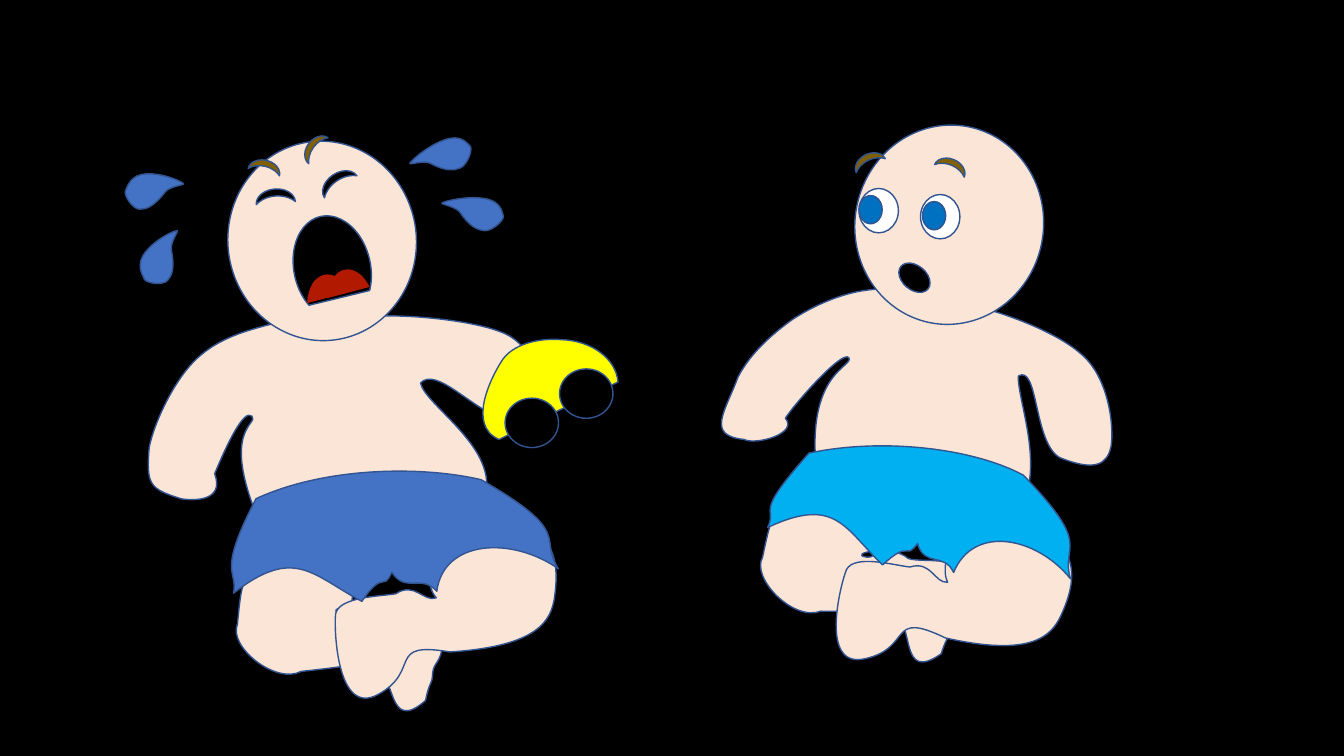
from math import cos, radians, sin

from lxml import etree
from pptx import Presentation
from pptx import util as u
from pptx.dml.color import RGBColor
from pptx.enum.shapes import MSO_SHAPE as kinds
from pptx.oxml.ns import qn

SKIN, BLUE, SKY, BROWN = "FBE5D6", "4472C4", "00B0F0", "806000"
BLACK, WHITE, IRIS, RED = "000000", "FFFFFF", "0070C0", "B11A01"
YELLOW, EDGE = "FFFF00", "325491"
UNIT = 1000  # freeform units per inch


def hue(fmt, color):
    """Give a fill or a line one solid colour."""
    fmt.solid()
    fmt.fore_color.rgb = RGBColor.from_string(color)


def draw(host, kind, box, fill, turn=0, edge=EDGE, adjust=(), stretch=(1, 1)):
    """Add a preset, or a closed outline if kind is a dict of named curves.

    A curve holds handle, handle, end, in inches from the centre of the unturned
    box. It starts where the one before it ends; the first starts at the last end.
    """
    left, top, wide, high = box
    if isinstance(kind, dict):
        x, y, right, low = [round(v * UNIT) for v in (left, top, left + wide, top + high)]
        frame = host.shapes.build_freeform(x, y, scale=914400 / UNIT)
        frame.add_line_segments([(right, y), (right, low), (x, low)])
        shape = frame.convert_to_shape()
        trace = shape._element.find(".//" + qn("a:path"))
        for step in list(trace):
            trace.remove(step)
        curves = list(kind.values())
        steps = [("a:moveTo", curves[-1][4:])] + [("a:cubicBezTo", c) for c in curves]
        for tag, nums in steps:
            step = etree.SubElement(trace, qn(tag))
            for dx, dy in zip(nums[::2], nums[1::2]):
                spot = etree.SubElement(step, qn("a:pt"))
                spot.set("x", str(round((wide / 2 + dx * stretch[0]) * UNIT)))
                spot.set("y", str(round((high / 2 + dy * stretch[1]) * UNIT)))
        etree.SubElement(trace, qn("a:close"))
    else:
        shape = host.shapes.add_shape(kind, *[u.Inches(v) for v in box])
        for i, value in enumerate(adjust):
            shape.adjustments[i] = value
    shape.shadow.inherit = False
    shape.rotation = turn
    hue(shape.fill, fill)
    if edge:
        hue(shape.line.fill, edge)
        shape.line.width = u.Pt(1)
    else:
        shape.line.fill.background()


# Outlines both babies share, from the centre of their boxes
BACK_LEG = {
    "shin": (-0.05, 0.29, -0.08, 0.31, -0.54, 0.07),
    "knee": (-0.83, 0.04, -1.01, -0.54, -0.81, -0.67),
    "thigh": (-0.36, -1.23, -0.59, -0.90, 0.18, -0.86),
    "seat": (0.63, -0.73, 0.28, -0.07, 0.11, -0.20),
    "fold": (-0.06, -0.32, 0.39, -0.21, 0.47, 0.00),
    "heel": (0.59, 0.12, 1.02, 0.21, 0.85, 0.51),
    "sole": (0.68, 0.79, 0.62, 0.70, 0.54, 0.80),
    "ball": (0.46, 0.91, 0.49, 0.83, 0.33, 0.99),
    "toes": (-0.18, 1.06, 0.24, 0.60, 0.09, 0.44),
}
FRONT_LEG = {
    "sole": (0.16, 0.60, -0.30, 0.57, 0.28, 0.29),
    "shin": (0.97, -0.27, 0.91, -0.55, 0.82, -0.74),
    "knee": (0.72, -0.93, 0.42, -1.54, -0.31, -0.88),
    "thigh": (-0.75, -0.74, -0.36, -0.11, -0.14, -0.07),
    "ankle": (-0.21, 0.04, -0.41, -0.08, -0.49, 0.13),
    "instep": (-0.61, 0.25, -0.93, 0.48, -0.86, 0.64),
    "toes": (-0.78, 0.78, -0.25, 1.47, -0.05, 1.04),
}
SHORTS = {
    "left hip": (-1.54, 0.50, -1.75, 0.59, -1.47, -0.22),
    "waist": (-0.85, -0.63, 0.09, -0.79, 0.71, -0.74),
    "right hip": (1.71, -0.35, 1.35, -0.26, 1.60, 0.02),
    "right hem": (1.10, -0.23, 0.43, -0.10, 0.44, 0.42),
    "right fold": (0.26, 0.27, 0.14, 0.49, -0.03, 0.30),
    "left fold": (-0.09, 0.52, -0.11, 0.27, -0.28, 0.63),
    "left hem": (-0.80, 0.45, -1.02, 0.18, -1.55, 0.74),
}
# The other baby's shorts sit lower at the left end of the waist
LOW_SHORTS = SHORTS | {
    "left hip": (-1.54, 0.50, -1.75, 0.71, -1.46, -0.10),
    "waist": (-0.83, -0.52, 0.09, -0.79, 0.71, -0.74),
}
TEAR = {
    "left side": (-0.155, 0.03, -0.12, -0.04, 0.03, -0.12),
    "neck": (0.10, -0.15, 0.14, -0.32, 0.15, -0.29),
    "right side": (0.17, -0.24, 0.19, -0.03, 0.15, 0.12),
    "right round": (0.11, 0.29, 0.0, 0.29, -0.05, 0.30),
    "left round": (-0.10, 0.29, -0.18, 0.17, -0.17, 0.10),
}

# Outlines used once, as they lie on the slide
CRY_BODY = {
    "left armpit": (2.42, 4.05, 2.25, 4.41, 2.13, 4.7),
    "left palm": (2.23, 4.97, 1.93, 4.97, 1.8, 4.95),
    "left hand": (1.48, 4.85, 1.45, 4.81, 1.48, 4.44),
    "left forearm": (1.53, 4.19, 1.72, 3.8, 1.91, 3.6),
    "left arm": (2.1, 3.4, 2.34, 3.31, 2.6, 3.24),
    "neck": (2.86, 3.16, 3.03, 3.23, 3.46, 3.16),
    "right arm": (3.88, 3.09, 4.65, 3.17, 4.96, 3.29),
    "right wrist": (5.27, 3.4, 5.32, 3.71, 5.33, 3.86),
    "right hand": (5.33, 4, 5.37, 4.18, 4.99, 4.15),
    "right armpit": (4.7, 4.08, 4.33, 3.63, 4.17, 3.8),
    "right flank": (4.22, 4.02, 4.91, 4.42, 4.82, 4.89),
    "belly": (4.71, 4.92, 2.81, 4.46, 2.57, 5.17),
    "left flank": (2.18, 4.25, 2.57, 4.21, 2.5, 4.13),
}
STARE_BODY = {
    "left armpit": (8.36, 3.46, 7.87, 4.02, 7.79, 4.15),
    "left palm": (7.92, 4.3, 7.5, 4.42, 7.38, 4.36),
    "left hand": (7, 4.32, 7.19, 4.09, 7.32, 3.74),
    "left forearm": (7.44, 3.51, 7.65, 3.32, 7.86, 3.17),
    "left arm": (8.07, 3.03, 8.35, 2.91, 8.59, 2.88),
    "neck": (8.83, 2.84, 8.89, 2.92, 9.31, 2.97),
    "right arm": (9.74, 3.01, 10.44, 3.26, 10.72, 3.51),
    "right wrist": (11.01, 3.75, 11.05, 4.26, 11.02, 4.43),
    "right hand": (10.98, 4.61, 10.86, 4.68, 10.51, 4.54),
    "right armpit": (10.25, 4.39, 10.3, 3.61, 10.1, 3.73),
    "right flank": (10.09, 3.96, 10.35, 4.58, 10.14, 5.01),
    "belly": (10.03, 5, 8.53, 4.06, 8.1, 4.68),
    "left flank": (7.99, 3.69, 8.47, 3.64, 8.42, 3.55),
}
HOOD = {
    "rear": (4.63, 4.22, 4.87, 3.75, 4.97, 3.59),
    "roof": (5.07, 3.42, 5.33, 3.35, 5.57, 3.37),
    "nose": (5.87, 3.38, 6.11, 3.56, 6.13, 3.79),
    "floor": (5.8, 3.95, 5.27, 4.2, 4.95, 4.36),
}
CRY_BOX, STARE_BOX = (1.42, 3.15, 3.92, 1.94), (7.24, 2.95, 3.85, 1.91)
HOOD_BOX = (4.98, 3.16, 0.94, 1.37)

# Turn those back into the frames of their boxes
for outline, (left, top, wide, high), turn in [
    (CRY_BODY, CRY_BOX, 353.9), (STARE_BODY, STARE_BOX, 10.1), (HOOD, HOOD_BOX, 84.8),
]:
    c, s = cos(radians(turn)), sin(radians(turn))
    for name, nums in outline.items():
        offs = [(x - left - wide / 2, y - top - high / 2) for x, y in zip(nums[::2], nums[1::2])]
        outline[name] = [v for dx, dy in offs for v in (dx * c + dy * s, dy * c - dx * s)]

deck = Presentation()
deck.slide_width, deck.slide_height = u.Inches(13.33), u.Inches(7.5)
slide = deck.slides.add_slide(deck.slide_layouts[6])
hue(slide.background.fill, BLACK)
crier, starer = [slide.shapes.add_group_shape() for _ in range(2)]

# Bodies and heads
for baby, body, box, head, turn in [
    (crier, CRY_BODY, CRY_BOX, (2.26, 1.4), 353.9),
    (starer, STARE_BODY, STARE_BOX, (8.48, 1.24), 10.1),
]:
    draw(baby, body, box, SKIN, turn)
    draw(baby, kinds.OVAL, (*head, 1.87, 1.98), SKIN, turn)

# Mouth and tongue, shut eyes, brows
draw(crier, kinds.CHORD, (2.77, 2.28, 1.05, 0.76), BLACK, 77.1, adjust=(27, 188.288))
for spot in [(3.13, 2.79), (2.93, 2.84)]:
    draw(crier, kinds.CHORD, (*spot, 0.7, 0.46), RED, 80.5, None, (68.689, 141.872))
for spot, turn in [((2.66, 1.75), 85.4), ((3.27, 1.6), 55.8)]:
    draw(crier, kinds.MOON, (*spot, 0.14, 0.39), BLACK, turn)
for baby, spot, turn in [
    (crier, (3.05, 1.3), 36.6), (crier, (2.57, 1.49), 103.2),
    (starer, (9.38, 1.48), 113), (starer, (8.55, 1.43), 64.1),
]:
    draw(baby, kinds.MOON, (*spot, 0.12, 0.32), BROWN, turn)

# Legs, then the shorts over them
for baby, back, tilt, front, lean in [
    (crier, (2.51, 5.31), 326.6, (3.53, 4.89), 35.5),
    (starer, (7.7, 4.76), 332.9, (8.56, 4.75), 51.7),
]:
    draw(baby, BACK_LEG, (*back, 1.78, 1.99), SKIN, tilt)
    draw(baby, FRONT_LEG, (*front, 1.74, 2.36), SKIN, lean)
draw(crier, SHORTS, (2.35, 4.64, 3.22, 1.49), BLUE, 8.6)
draw(starer, LOW_SHORTS, (7.73, 4.39, 3.03, 1.48), SKY, 23.3, stretch=(0.94, 1))

# Open eyes and small mouth
for size, fill, spots in [
    ((0.39, 0.44), WHITE, [(8.52, 1.87), (9.13, 1.93)]),
    ((0.23, 0.28), IRIS, [(8.52, 1.94), (9.15, 2)]),
]:
    for spot in spots:
        draw(starer, kinds.OVAL, (*spot, *size), fill)
draw(starer, kinds.OVAL, (8.95, 2.58, 0.24, 0.35), BLACK, 310.1)

# Tears: those on the left are flipped and a little wider
for size, stretch, places in [
    ((0.34, 0.58), (1, 1), [((4.52, 1.84), 263.7), ((4.22, 1.29), 235.9)]),
    ((0.38, 0.53), (1.12, -0.91), [((1.44, 2.31), 235.9), ((1.33, 1.65), 284.8)]),
]:
    for spot, turn in places:
        draw(slide, TEAR, (*spot, *size), BLUE, turn, stretch=stretch)

# Toy car
car = slide.shapes.add_group_shape()
draw(car, HOOD, HOOD_BOX, YELLOW, 84.8)
for spot in [(5.01, 3.95), (5.55, 3.66)]:
    draw(car, kinds.OVAL, (*spot, 0.53, 0.49), BLACK)

deck.save("out.pptx")
